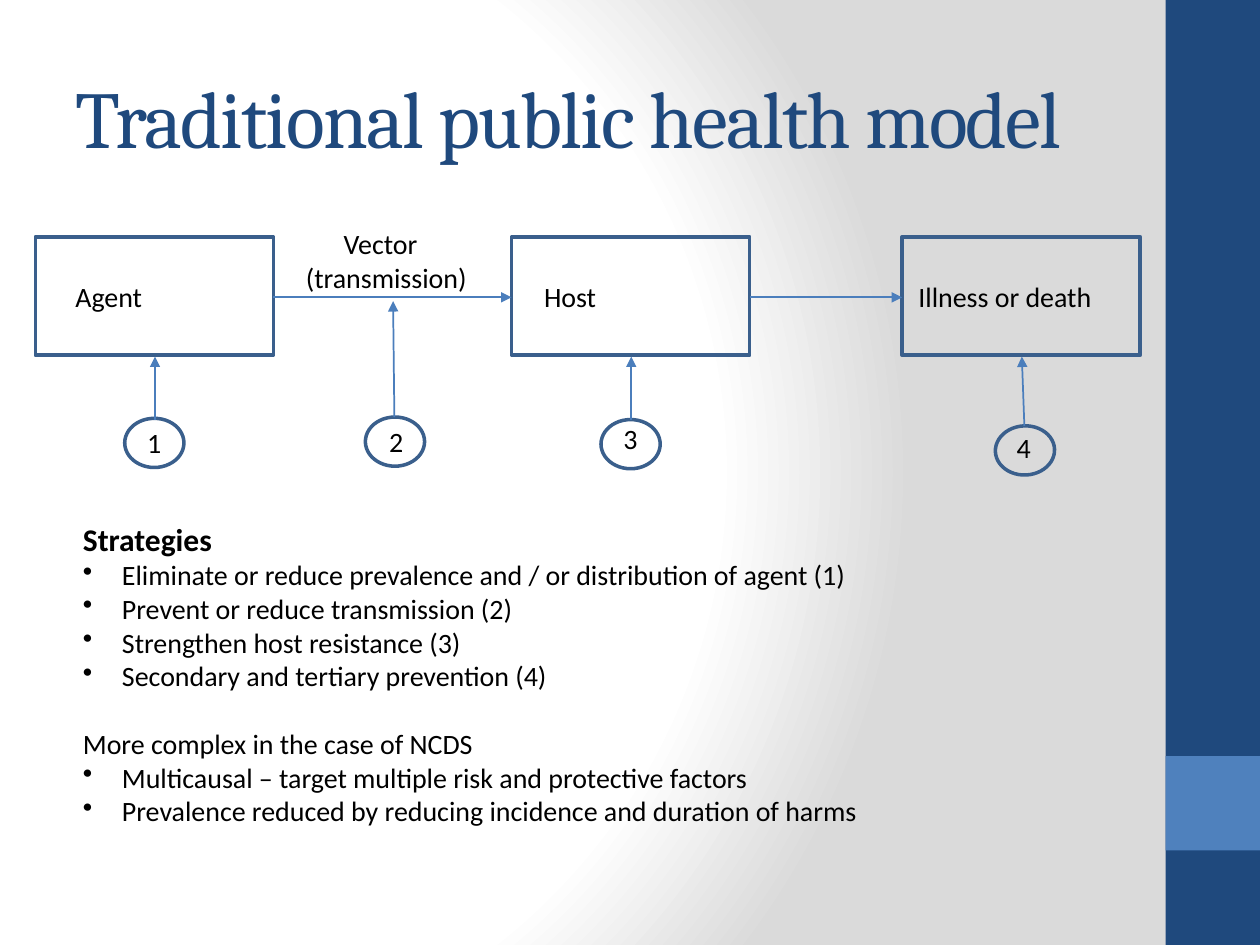
from lxml import etree
from pptx import Presentation
from pptx.dml.color import RGBColor
from pptx.enum.shapes import MSO_CONNECTOR, MSO_SHAPE
from pptx.enum.text import MSO_ANCHOR, MSO_AUTO_SIZE, PP_ALIGN
from pptx.oxml import parse_xml
from pptx.oxml.ns import nsdecls, qn
from pptx.util import Inches, Pt

RECTANGLE, OVAL = MSO_SHAPE.RECTANGLE, MSO_SHAPE.OVAL
STRAIGHT = MSO_CONNECTOR.STRAIGHT
MIDDLE, LEFT = MSO_ANCHOR.MIDDLE, PP_ALIGN.LEFT
GROW = MSO_AUTO_SIZE.SHAPE_TO_FIT_TEXT


class Theme:
    navy = RGBColor(0x1F, 0x49, 0x7D)
    blue = RGBColor(0x4F, 0x81, 0xBD)
    outline = RGBColor(0x3A, 0x5F, 0x8C)
    arrow = RGBColor(0x4B, 0x7E, 0xBC)
    text = RGBColor(0, 0, 0)
    glow, shade = "FFFFFF", "DADADA"
    heading_font, body_font = "Cambria", "Calibri"
    title_size, strategy_size, body_size = Pt(46), Pt(18), Pt(16)


def add_shape(kind, left, top, width, height, fill=None):
    """Add a solid shape without outline, or an outlined one without fill."""
    shape = page.shapes.add_shape(
        kind, Inches(left), Inches(top), Inches(width), Inches(height))
    shape.shadow.inherit = False
    if fill is None:
        shape.fill.background()
        shape.line.color.rgb = Theme.outline
        shape.line.width = Pt(2)
    else:
        shape.fill.solid()
        shape.fill.fore_color.rgb = fill
        shape.line.fill.background()
    return shape


def add_text(left, top, width, height, lines):
    """Add a text box with one body paragraph per line."""
    box = page.shapes.add_textbox(
        Inches(left), Inches(top), Inches(width), Inches(height))
    frame = box.text_frame
    frame.word_wrap = True
    frame.auto_size = GROW
    frame.text = "\n".join(lines)
    for para in frame.paragraphs:
        para.font.name = Theme.body_font
        para.font.size = Theme.body_size
        para.font.color.rgb = Theme.text
    return frame.paragraphs


deck = Presentation()
deck.slide_width, deck.slide_height = Inches(10), Inches(7.5)
page = deck.slides.add_slide(deck.slide_layouts[5])

# Background: radial gradient
page._element.cSld.insert(0, parse_xml(f"""
<p:bg {nsdecls("p", "a")}><p:bgPr>
  <a:gradFill rotWithShape="1">
    <a:gsLst>
      <a:gs pos="0"><a:srgbClr val="{Theme.glow}"/></a:gs>
      <a:gs pos="75000"><a:srgbClr val="{Theme.glow}"/></a:gs>
      <a:gs pos="100000"><a:srgbClr val="{Theme.shade}"/></a:gs>
    </a:gsLst>
    <a:path path="circle">
      <a:fillToRect l="20000" t="50000" r="100000" b="50000"/>
    </a:path>
  </a:gradFill><a:effectLst/>
</p:bgPr></p:bg>"""))

# Side band
add_shape(RECTANGLE, 9.25, 0, 0.75, 7.5, Theme.navy)
add_shape(RECTANGLE, 9.25, 6, 0.75, 0.75, Theme.blue)

# Title
title = page.shapes.title
title.left, title.top = Inches(0.5), Inches(0.3)
title.width, title.height = Inches(8.44), Inches(1.25)
title.text_frame.text = "Traditional public health model"
title.text_frame.vertical_anchor = MIDDLE
para = title.text_frame.paragraphs[0]
para.alignment = LEFT
span = para.runs[0]
span.font.name = Theme.heading_font
span.font.size = Theme.title_size
span.font.color.rgb = Theme.navy
span._r.get_or_add_rPr().set("spc", "-100")

# Stages: box left, label, label left, label width
STAGE_TOP, STAGE_WIDTH, STAGE_HEIGHT = 1.88, 1.89, 0.94
for left, label, label_left, label_width in (
    (0.28, "Agent", 0.5, 1.42),
    (4.06, "Host", 4.22, 1.5),
    (7.16, "Illness or death", 7.19, 1.78),
):
    add_shape(RECTANGLE, left, STAGE_TOP, STAGE_WIDTH, STAGE_HEIGHT)
    add_text(label_left, 2.17, label_width, 0.37, [label])

# Transmission label
vector, _ = add_text(2.33, 1.75, 1.57, 0.64, ["Vector", "(transmission)"])
vector._p.get_or_add_pPr().set("marL", str(Inches(0.3)))

# Numbered intervention points: circle corner, rotation, number box
for number, left, top, rotation, text_left, text_top, text_width in (
    ("1", 0.99, 3.32, 0, 1.07, 3.33, 0.31),
    ("2", 2.9, 3.31, 0, 2.99, 3.32, 0.47),
    ("3", 4.77, 3.33, 0, 4.85, 3.3, 0.47),
    ("4", 7.9, 3.38, 357.5, 7.97, 3.37, 0.47),
):
    add_shape(OVAL, left, top, 0.47, 0.39).rotation = rotation
    add_text(text_left, text_top, text_width, 0.37, [number])

# Arrows: between stages, then up from each number
for x1, y1, x2, y2 in (
    (2.17, 2.36, 4.06, 2.36),
    (5.95, 2.36, 7.16, 2.36),
    (1.23, 3.33, 1.23, 2.83),
    (3.13, 3.31, 3.12, 2.39),
    (5.01, 3.33, 5.01, 2.83),
    (8.13, 3.38, 8.11, 2.83),
):
    arrow = page.shapes.add_connector(
        STRAIGHT, Inches(x1), Inches(y1), Inches(x2), Inches(y2))
    arrow.line.color.rgb = Theme.arrow
    arrow.line.width = Pt(1)
    etree.SubElement(arrow.line._get_or_add_ln(), qn("a:tailEnd"), type="triangle")
    etree.SubElement(arrow._element.spPr, qn("a:effectLst"))

# Strategies
HEADING, COMPLEX = "Strategies", "More complex in the case of NCDS"
for para in add_text(0.56, 4.08, 7.01, 2.56, [
    HEADING,
    "Eliminate or reduce prevalence and / or distribution of agent (1)",
    "Prevent or reduce transmission (2)",
    "Strengthen host resistance (3)",
    "Secondary and tertiary prevention (4)",
    COMPLEX,
    "Multicausal – target multiple risk and protective factors",
    "Prevalence reduced by reducing incidence and duration of harms",
]):
    if para.text == HEADING:
        para.font.size = Theme.strategy_size
        para.font.bold = True
    elif para.text == COMPLEX:
        para.space_before = Pt(19.5)
    else:
        props = para._p.get_or_add_pPr()
        props.set("marL", str(Inches(0.31)))
        props.set("indent", str(Inches(-0.31)))
        bullet = parse_xml(f'<a:buChar {nsdecls("a")} char="•"/>')
        props.insert_element_before(bullet, "a:tabLst", "a:defRPr", "a:extLst")

deck.save("out.pptx")
